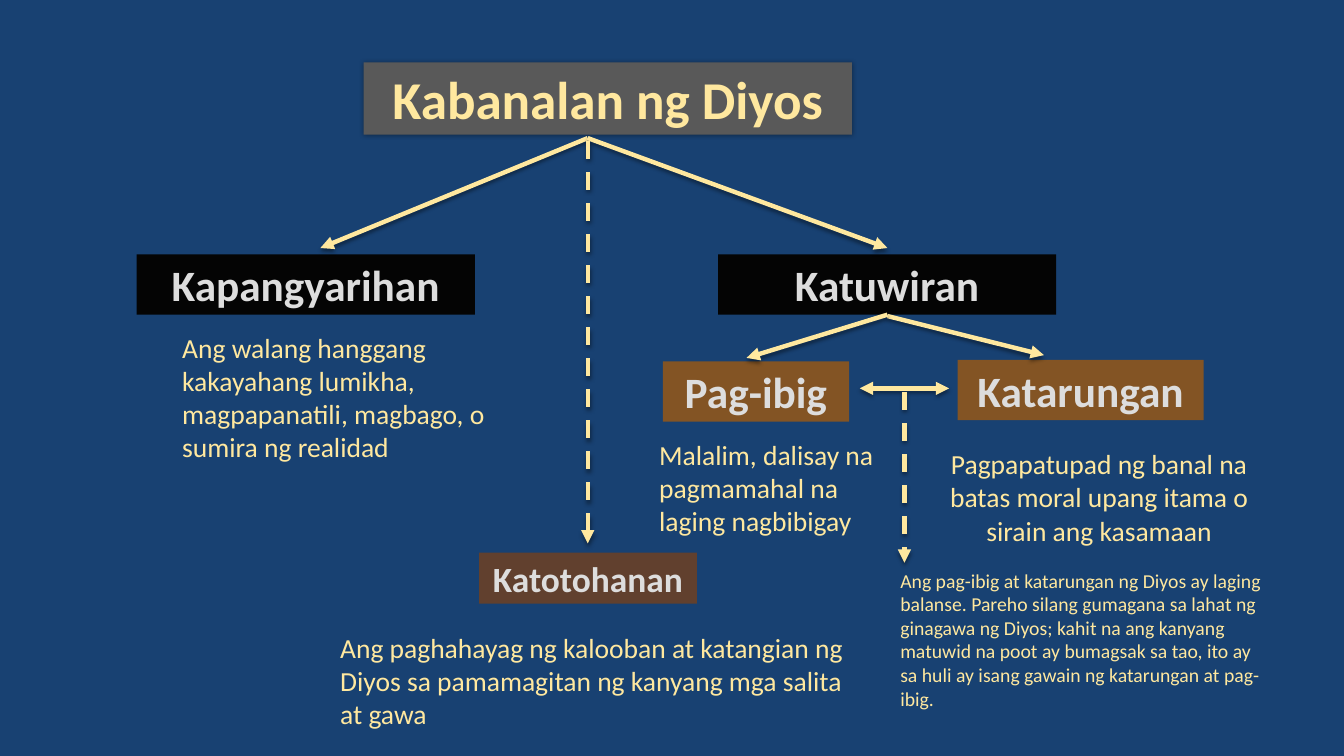
from typing import NamedTuple

from lxml.etree import SubElement
from pptx import Presentation
from pptx.dml.color import RGBColor
from pptx.enum.dml import MSO_LINE
from pptx.enum.shapes import MSO_CONNECTOR, MSO_SHAPE
from pptx.enum.text import MSO_ANCHOR, MSO_AUTO_SIZE, PP_ALIGN
from pptx.oxml.ns import qn
from pptx.util import Cm, Pt

NAVY = RGBColor(0x18, 0x41, 0x72)
CREAM = RGBColor(0xFF, 0xE8, 0x9F)
SILVER = RGBColor(0xDD, 0xDD, 0xDD)
GRAY = RGBColor(0x59, 0x59, 0x59)
BLACK = RGBColor(0x04, 0x04, 0x04)
BROWN = RGBColor(0x61, 0x40, 0x2E)
BRONZE = RGBColor(0x83, 0x54, 0x24)

FONT = "Calibri"
INSET = Cm(0.15)


class Area(NamedTuple):
    left: float
    top: float
    width: float
    height: float


class Attribute(NamedTuple):
    text: str
    area: Area
    fill: RGBColor
    size: int = 44


class Description(NamedTuple):
    text: str
    area: Area
    size: int = 28
    align: PP_ALIGN = PP_ALIGN.LEFT


class Arrow(NamedTuple):
    start: tuple[float, float]
    end: tuple[float, float]
    dashed: bool = False
    double: bool = False


TITLE = Attribute("Kabanalan ng Diyos", Area(13.03, 2.24, 17.5, 2.59), GRAY, 54)

ATTRIBUTES = [
    Attribute("Kapangyarihan", Area(4.9, 9.12, 12.12, 2.16), BLACK),
    Attribute("Katuwiran", Area(25.73, 9.12, 12.12, 2.16), BLACK),
    Attribute("Katotohanan", Area(17.17, 19.81, 7.8, 1.83), BROWN, 36),
    Attribute("Pag-ibig", Area(23.75, 12.95, 6.68, 2.16), BRONZE),
    Attribute("Katarungan", Area(34.32, 12.9, 8.81, 2.16), BRONZE),
]

DESCRIPTIONS = [
    Description("Ang walang hanggang kakayahang lumikha, magpapanatili, magbago, "
                "o sumira ng realidad", Area(6.38, 11.68, 13.74, 5.08)),
    Description("Ang paghahayag ng kalooban at katangian ng Diyos sa pamamagitan "
                "ng kanyang mga salita at gawa", Area(12.04, 22.45, 18.49, 3.89)),
    Description("Malalim, dalisay na pagmamahal na laging nagbibigay",
                Area(23.47, 15.54, 8.36, 3.89)),
    Description("Pagpapatupad ng banal na batas moral upang itama o sirain ang "
                "kasamaan", Area(32.99, 16.48, 12.78, 2.67), align=PP_ALIGN.CENTER),
    Description("Ang pag-ibig at katarungan ng Diyos ay laging balanse. Pareho "
                "silang gumagana sa lahat ng ginagawa ng Diyos; kahit na ang "
                "kanyang matuwid na poot ay bumagsak sa tao, ito ay sa huli ay "
                "isang gawain ng katarungan at pag-ibig.",
                Area(32.11, 21.06, 13.23, 3.71), size=20),
]

ARROWS = [
    Arrow((21.06, 4.95), (11.48, 8.89)),
    Arrow((21.06, 4.95), (31.8, 8.89)),
    Arrow((21.06, 5.05), (21.06, 19.48), dashed=True),
    Arrow((31.8, 11.33), (37.41, 12.73)),
    Arrow((31.8, 11.28), (26.75, 12.83)),
    Arrow((30.81, 13.92), (34.01, 13.92), double=True),
    Arrow((32.41, 14.05), (32.41, 20.17), dashed=True),
]


def add_shadow(shape, blur: float, distance: float, degrees: int) -> None:
    effects = SubElement(shape._element.spPr, qn("a:effectLst"))
    shadow = SubElement(effects, qn("a:outerShdw"), blurRad=str(Pt(blur)),
                        dist=str(Pt(distance)), dir=str(degrees * 60000),
                        rotWithShape="0")
    color = SubElement(shadow, qn("a:srgbClr"), val="000000")
    SubElement(color, qn("a:alpha"), val="40000")


def write_text(box, text: str, size: int, color: RGBColor,
               align: PP_ALIGN, bold: bool = False) -> None:
    frame = box.text_frame
    frame.word_wrap = True
    frame.auto_size = MSO_AUTO_SIZE.SHAPE_TO_FIT_TEXT
    frame.vertical_anchor = MSO_ANCHOR.MIDDLE
    frame.margin_left = frame.margin_right = INSET
    frame.margin_top = frame.margin_bottom = INSET
    para = frame.paragraphs[0]
    para.alignment = align
    span = para.add_run()
    span.text = text
    span.font.name = FONT
    span.font.size = Pt(size)
    span.font.bold = bold
    span.font.color.rgb = color


def format_box(box, attribute: Attribute, color: RGBColor) -> None:
    box.fill.solid()
    box.fill.fore_color.rgb = attribute.fill
    box.line.fill.background()
    write_text(box, attribute.text, attribute.size, color, PP_ALIGN.CENTER, True)


def place_title(page) -> None:
    title = page.shapes.title
    title.left, title.top, title.width, title.height = map(Cm, TITLE.area)
    format_box(title, TITLE, CREAM)
    add_shadow(title, 5, 0, 0)


def add_attribute(page, attribute: Attribute) -> None:
    box = page.shapes.add_shape(MSO_SHAPE.RECTANGLE, *map(Cm, attribute.area))
    box.shadow.inherit = False
    format_box(box, attribute, SILVER)


def add_description(page, description: Description) -> None:
    box = page.shapes.add_textbox(*map(Cm, description.area))
    write_text(box, description.text, description.size, CREAM, description.align)


def add_arrow(page, arrow: Arrow) -> None:
    connector = page.shapes.add_connector(
        MSO_CONNECTOR.STRAIGHT, *map(Cm, arrow.start + arrow.end))
    line = connector.line
    line.color.rgb = CREAM
    line.width = Pt(4.5)
    if arrow.dashed:
        line.dash_style = MSO_LINE.DASH
    outline = connector._element.spPr.find(qn("a:ln"))
    if arrow.double:
        SubElement(outline, qn("a:headEnd"), type="triangle")
    SubElement(outline, qn("a:tailEnd"), type="triangle")
    add_shadow(connector, 4, 3, 90)


def main() -> None:
    deck = Presentation()
    deck.slide_width, deck.slide_height = Cm(48.16), Cm(27.1)
    page = deck.slides.add_slide(deck.slide_layouts.get_by_name("Title Only"))
    page.background.fill.solid()
    page.background.fill.fore_color.rgb = NAVY

    # Title and the attributes below it
    place_title(page)
    for attribute in ATTRIBUTES:
        add_attribute(page, attribute)

    # Arrows between the boxes
    for arrow in ARROWS:
        add_arrow(page, arrow)

    # Explanations
    for description in DESCRIPTIONS:
        add_description(page, description)

    deck.save("out.pptx")


if __name__ == "__main__":
    main()
